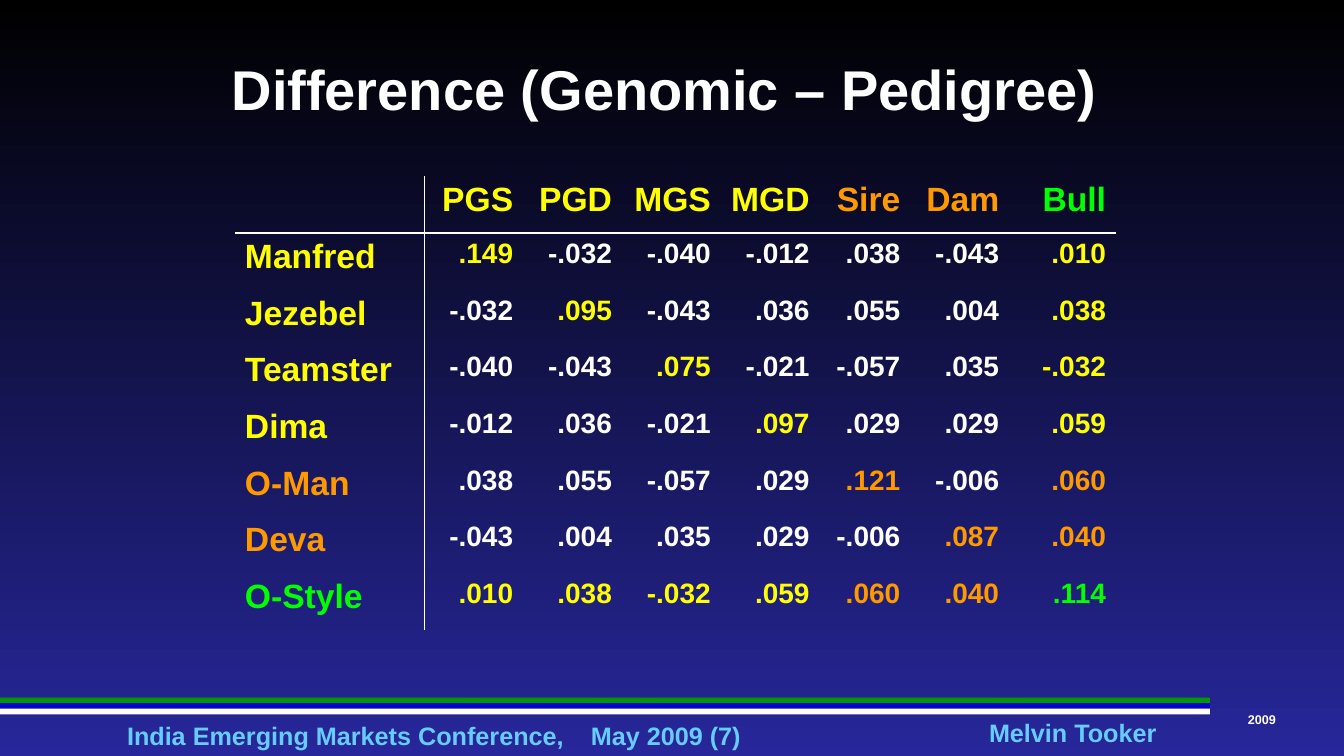
from lxml.etree import SubElement
from pptx import Presentation
from pptx.dml.color import RGBColor
from pptx.enum.shapes import MSO_SHAPE
from pptx.enum.text import MSO_ANCHOR, PP_ALIGN
from pptx.oxml.ns import qn
from pptx.util import Inches, Pt

WHITE = RGBColor(0xFF, 0xFF, 0xFF)
BLACK = RGBColor(0x00, 0x00, 0x00)
NAVY = RGBColor(0x27, 0x27, 0x9B)
BLUE = RGBColor(0x00, 0x00, 0xCC)
SKY = RGBColor(0x66, 0xCC, 0xFF)
DARK_GREEN = RGBColor(0x00, 0x99, 0x00)
YELLOW = RGBColor(0xFF, 0xFF, 0x00)
ORANGE = RGBColor(0xFF, 0x99, 0x00)
GREEN = RGBColor(0x00, 0xFF, 0x00)


def write(frame, text, size, color, align=PP_ALIGN.LEFT, tab=None):
    para = frame.paragraphs[0]
    para.alignment = align
    if tab:
        tabs = SubElement(para._p.get_or_add_pPr(), qn("a:tabLst"))
        SubElement(tabs, qn("a:tab"), pos=str(tab), algn="l")
    span = para.add_run()
    span.text = text
    span.font.name = "Arial"
    span.font.size = Pt(size)
    span.font.bold = True
    span.font.color.rgb = color


def set_borders(cell, lined):
    """Draw a white line on the lined edges (L, R, T, B) and none on the others."""
    properties = cell._tc.get_or_add_tcPr()
    for edge in "LRTB":
        line = SubElement(properties, qn(f"a:ln{edge}"), w=str(Pt(1)))
        if edge in lined:
            fill = SubElement(line, qn("a:solidFill"))
            SubElement(fill, qn("a:srgbClr"), val=str(WHITE))
        else:
            SubElement(line, qn("a:noFill"))


deck = Presentation()
deck.slide_width, deck.slide_height = Inches(13.33), Inches(7.5)
page = deck.slides.add_slide(deck.slide_layouts[6])

backdrop = page.background.fill
backdrop.gradient()
backdrop.gradient_angle = 270
for stop, color, position in zip(backdrop.gradient_stops, (BLACK, NAVY), (0, 1)):
    stop.color.rgb = color
    stop.position = position

# Footer stripes
stripe_height = deck.slide_height // 135
for index, color in enumerate((DARK_GREEN, BLUE, WHITE)):
    stripe = page.shapes.add_shape(
        MSO_SHAPE.RECTANGLE, 0, Inches(6.92) + index * stripe_height,
        Inches(12), stripe_height)
    stripe.shadow.inherit = False
    stripe.fill.solid()
    stripe.fill.fore_color.rgb = color
    stripe.line.fill.background()

# Title and footer texts
texts = [
    ("Difference (Genomic – Pedigree)", (0.25, 0.25, 12.67, 1.25), 40, WHITE,
     PP_ALIGN.CENTER, None),
    ("India Emerging Markets Conference,\tMay 2009 (7)", (1.26, 7.15, 7.85, 0.3), 18, SKY,
     PP_ALIGN.LEFT, Inches(4.6)),
    ("Melvin Tooker", (9.8, 7.12, 1.68, 0.3), 18, SKY, PP_ALIGN.CENTER, None),
    ("2009", (12.33, 7.06, 0.37, 0.15), 9, WHITE, PP_ALIGN.CENTER, None),
]
for text, place, size, color, align, tab in texts:
    box = page.shapes.add_textbox(*map(Inches, place))
    frame = box.text_frame
    frame.word_wrap = True
    frame.vertical_anchor = MSO_ANCHOR.MIDDLE
    frame.margin_left = frame.margin_right = frame.margin_top = frame.margin_bottom = 0
    write(frame, text, size, color, align, tab)

# Table of differences: relatives across and animals down, in the same order
relatives = ["PGS", "PGD", "MGS", "MGD", "Sire", "Dam", "Bull"]
animals = ["Manfred", "Jezebel", "Teamster", "Dima", "O-Man", "Deva", "O-Style"]
colors = [YELLOW] * 4 + [ORANGE] * 2 + [GREEN]
differences = [
    [".149", "-.032", "-.040", "-.012", ".038", "-.043", ".010"],
    ["-.032", ".095", "-.043", ".036", ".055", ".004", ".038"],
    ["-.040", "-.043", ".075", "-.021", "-.057", ".035", "-.032"],
    ["-.012", ".036", "-.021", ".097", ".029", ".029", ".059"],
    [".038", ".055", "-.057", ".029", ".121", "-.006", ".060"],
    ["-.043", ".004", ".035", ".029", "-.006", ".087", ".040"],
    [".010", ".038", "-.032", ".059", ".060", ".040", ".114"],
]
rows = [[""] + relatives] + [[name] + line for name, line in zip(animals, differences)]
last = len(relatives)

table = page.shapes.add_table(
    len(rows), len(rows[0]), Inches(2.33), Inches(1.75), Inches(8.75), Inches(4.5)).table
table.first_row = table.horz_banding = False
for column, width in zip(table.columns, (1.88, 0.98, 0.98, 0.98, 0.98, 0.9, 0.98, 1.06)):
    column.width = Inches(width)

for row, line in enumerate(rows):
    for col, text in enumerate(line):
        cell = table.cell(row, col)
        set_borders(cell, {0: "R", 1: "L"}.get(col, "") + {0: "B", 1: "T"}.get(row, ""))
        cell.fill.background()
        if not text:
            continue
        heading = row == 0 or col == 0
        if heading:
            color = colors[max(row, col) - 1]
        elif row == col or last in (row, col):
            color = colors[min(row, col) - 1]
        else:
            color = WHITE
        write(cell.text_frame, text, 24 if heading else 20, color,
              PP_ALIGN.RIGHT if col else PP_ALIGN.LEFT)

deck.save("out.pptx")
